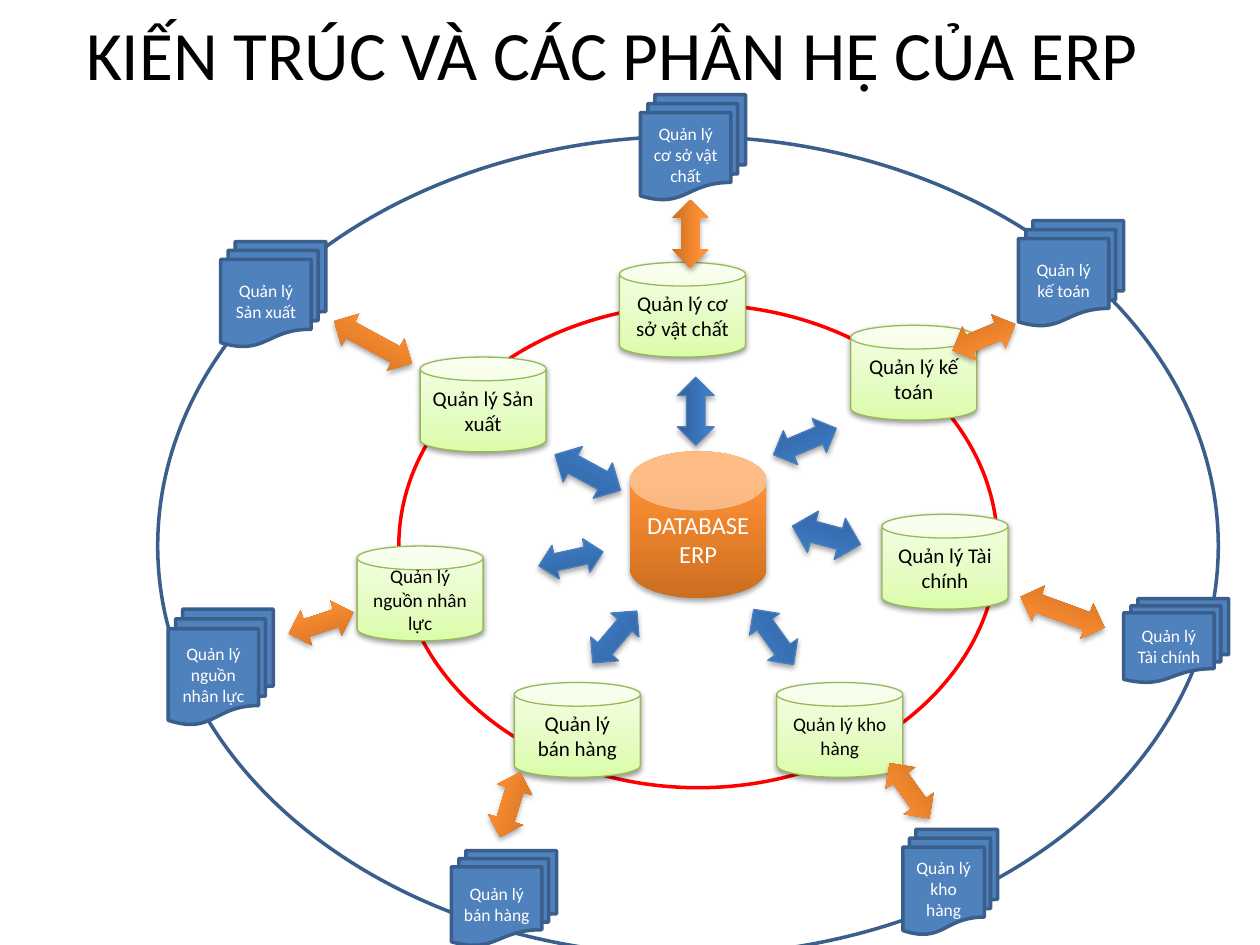
from lxml.etree import SubElement, Element
from pptx import Presentation
from pptx.dml.color import RGBColor
from pptx.enum.shapes import MSO_SHAPE
from pptx.enum.text import MSO_ANCHOR, MSO_AUTO_SIZE, PP_ALIGN
from pptx.oxml.ns import qn
from pptx.util import Cm, Pt

# Content: lengths in cm
TITLE = "KIẾN TRÚC VÀ CÁC PHÂN HỆ CỦA ERP"
FONT = "Calibri"
COLORS = {"black": "000000", "white": "FFFFFF", "red": "FF0000", "blue": "4F81BD",
          "navy": "3A5F8C", "green_edge": "98B955", "blue_edge": "4B7EBC"}
GRADIENTS = {
    "orange": [(0, "CC6E20"), (80, "FF9034"), (100, "FF9136")],
    "green": [(0, "DAFDA7"), (35, "E4FCC2"), (100, "F5FFE7")],
    "blue": [(0, "2F5F99"), (80, "3D7CC7"), (100, "3A7CCB")],
}
RINGS = [((8.04, 6.14, 12.07, 9.74), "red"), ((3.18, 2.75, 21.38, 16.51), "navy")]
DATABASE = ("DATABASE ERP", (12.7, 9.1, 2.75, 2.96))

# Module: name, document box, can position, can text size
MODULES = [
    ("Quản lý cơ sở vật chất", (12.91, 1.91, 2.12, 2.12), (12.49, 5.29), 12),
    ("Quản lý kế toán", (20.53, 4.45, 2.12, 2.12), (17.15, 6.56), 12),
    ("Quản lý Tài chính", (22.65, 12.07, 2.12, 1.69), (17.78, 10.37), 12),
    ("Quản lý kho hàng", (18.2, 16.72, 1.91, 2.12), (15.66, 13.76), 11),
    ("Quản lý bán hàng", (9.1, 17.15, 2.12, 1.91), (10.37, 13.76), 12),
    ("Quản lý nguồn nhân lực", (3.39, 12.28, 2.12, 2.33), (7.2, 11.01), 11),
    ("Quản lý Sản xuất", (4.45, 4.87, 2.12, 2.12), (8.47, 7.2), 12),
]
CAN_SIZE = (2.54, 1.91)
ARROW_SIZE = (1.37, 0.74)

# Arrow: position, rotation, size
OUTER_ARROWS = [
    ((13.23, 4.34), 90, ARROW_SIZE),
    ((19.15, 6.43), 157.1, ARROW_SIZE),
    ((20.52, 11.96), 200.1, (1.8, 0.76)),
    ((17.65, 15.57), 234.2, ARROW_SIZE),
    ((9.6, 15.85), 287.2, ARROW_SIZE),
    ((5.79, 12.19), 341.8, ARROW_SIZE),
    ((6.63, 6.53), 28.5, (1.78, 0.74)),
]
INNER_ARROWS = [
    ((13.34, 7.92), 90, ARROW_SIZE),
    ((15.54, 8.53), 157.1, ARROW_SIZE),
    ((15.95, 10.36), 195.1, (1.42, 0.86)),
    ((14.91, 12.47), 234.2, ARROW_SIZE),
    ((11.71, 12.47), 310.3, ARROW_SIZE),
    ((10.85, 10.92), 347.6, (1.32, 0.69)),
    ((11.1, 9.12), 28.5, (1.5, 0.81)),
]


def rgb(name):
    return RGBColor.from_string(COLORS[name])


def add_shape(s, kind, box, edge=None, width=0.75):
    sp = s.shapes.add_shape(kind, *map(Cm, box))
    sp.shadow.inherit = False
    if edge:
        sp.line.color.rgb = rgb(edge)
        sp.line.width = Pt(width)
    else:
        sp.line.fill.background()
    return sp


def add_gradient(sp, name, alpha=35, dist=1.8):
    """Vertical gradient fill with a soft shadow below."""
    sp_pr = sp._element.spPr
    grad = Element(qn("a:gradFill"), rotWithShape="1")
    stops = SubElement(grad, qn("a:gsLst"))
    for pos, color in GRADIENTS[name]:
        gs = SubElement(stops, qn("a:gs"), pos=str(pos * 1000))
        SubElement(gs, qn("a:srgbClr"), val=color)
    SubElement(grad, qn("a:lin"), ang="16200000", scaled="0")
    sp_pr.find(qn("a:prstGeom")).addnext(grad)
    shadow = SubElement(sp_pr.find(qn("a:effectLst")), qn("a:outerShdw"),
                        blurRad=str(Pt(3.1)), dist=str(Pt(dist)),
                        dir="5400000", rotWithShape="0")
    color = SubElement(shadow, qn("a:srgbClr"), val=COLORS["black"])
    SubElement(color, qn("a:alpha"), val=str(alpha * 1000))


def add_text(sp, text, size, color, align=PP_ALIGN.CENTER):
    tf = sp.text_frame
    tf.word_wrap = True
    tf.vertical_anchor = MSO_ANCHOR.MIDDLE
    p = tf.paragraphs[0]
    p.alignment = align
    r = p.add_run()
    r.text = text
    r.font.size = Pt(size)
    r.font.name = FONT
    r.font.color.rgb = rgb(color)


def main():
    prs = Presentation()
    prs.slide_width, prs.slide_height = Cm(25.4), Cm(19.05)
    s = prs.slides.add_slide(prs.slide_layouts[5])

    # Title
    title = s.shapes.title
    title.left, title.top, title.width, title.height = map(Cm, (1.48, 0, 23.92, 2.12))
    add_text(title, TITLE, 39.6, "black", PP_ALIGN.LEFT)
    title.text_frame.auto_size = MSO_AUTO_SIZE.NONE

    # Rings
    for box, edge in RINGS:
        add_shape(s, MSO_SHAPE.OVAL, box, edge, 2).fill.background()

    # Central database
    text, box = DATABASE
    sp = add_shape(s, MSO_SHAPE.CAN, box)
    sp.adjustments[0] = 0.431
    add_gradient(sp, "orange")
    add_text(sp, text, 14, "white")

    # Module documents and their data stores
    for name, doc_box, can_pos, size in MODULES:
        sp = add_shape(s, MSO_SHAPE.FLOWCHART_MULTIDOCUMENT, doc_box, "navy", 2)
        sp.fill.solid()
        sp.fill.fore_color.rgb = rgb("blue")
        add_text(sp, name, 10, "white")
        sp = add_shape(s, MSO_SHAPE.CAN, can_pos + CAN_SIZE, "green_edge")
        add_gradient(sp, "green", 38, 1.6)
        add_text(sp, name, size, "black")

    # Two-way arrows
    for arrows, fill, edge in ((OUTER_ARROWS, "orange", None),
                               (INNER_ARROWS, "blue", "blue_edge")):
        for pos, rotation, size in arrows:
            sp = add_shape(s, MSO_SHAPE.LEFT_RIGHT_ARROW, pos + size, edge)
            sp.rotation = rotation
            add_gradient(sp, fill)

    prs.save("out.pptx")


if __name__ == "__main__":
    main()
